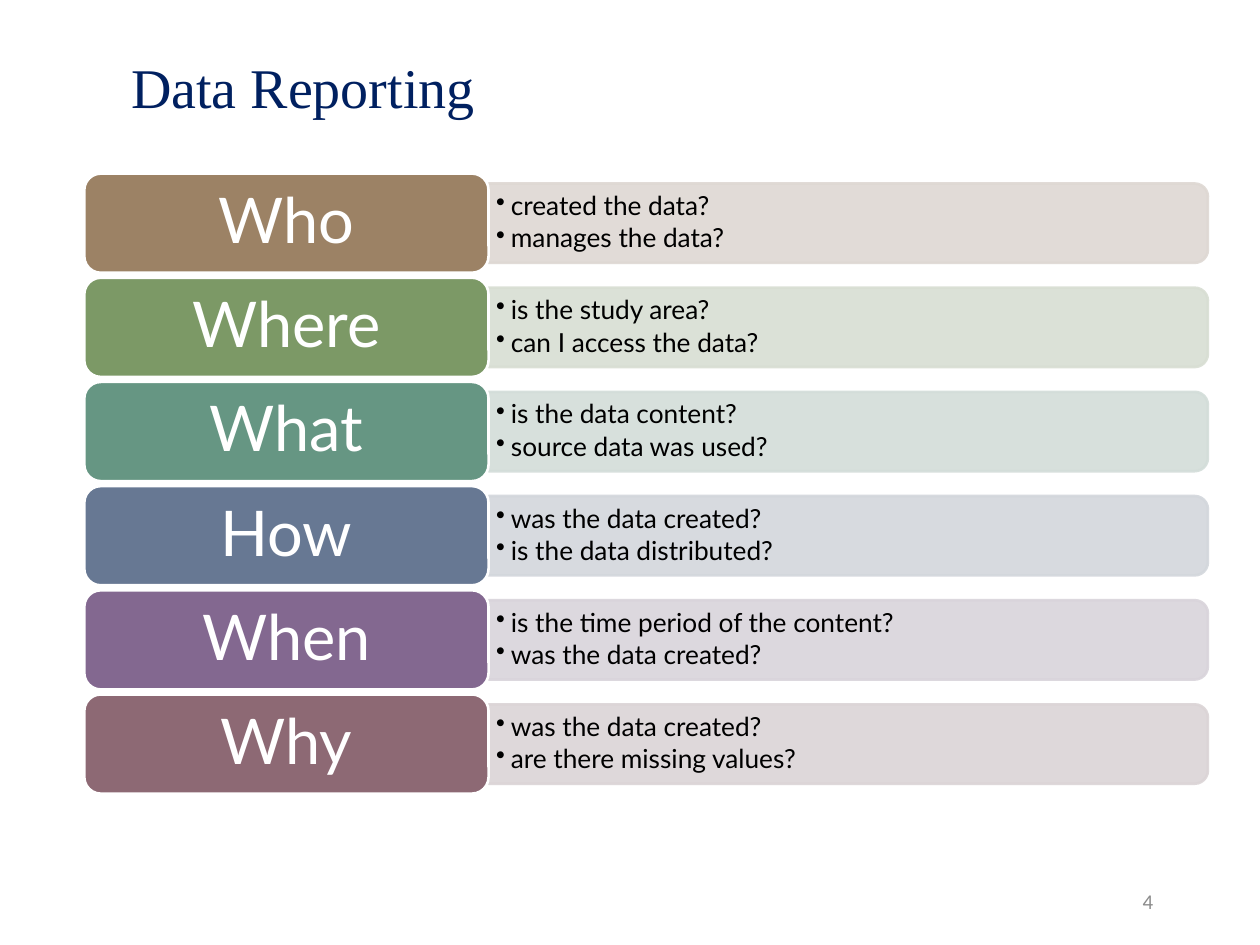
from lxml.etree import SubElement
from pptx import Presentation
from pptx.dml.color import RGBColor
from pptx.enum.shapes import MSO_SHAPE
from pptx.enum.text import MSO_ANCHOR, PP_ALIGN
from pptx.oxml.ns import qn
from pptx.util import Cm, Pt

NAVY = RGBColor(0x00, 0x20, 0x60)
GREY = RGBColor(0x8C, 0x8C, 0x8C)
BLACK = RGBColor(0x00, 0x00, 0x00)
WHITE = RGBColor(0xFF, 0xFF, 0xFF)
BROWN, PALE_BROWN = RGBColor(0x9C, 0x82, 0x65), RGBColor(0xDE, 0xD8, 0xD3)
GREEN, PALE_GREEN = RGBColor(0x7C, 0x99, 0x66), RGBColor(0xD8, 0xDE, 0xD3)
TEAL, PALE_TEAL = RGBColor(0x66, 0x96, 0x83), RGBColor(0xD3, 0xDD, 0xD9)
BLUE, PALE_BLUE = RGBColor(0x67, 0x78, 0x93), RGBColor(0xD3, 0xD7, 0xDC)
PURPLE, PALE_PURPLE = RGBColor(0x83, 0x68, 0x90), RGBColor(0xD9, 0xD4, 0xDB)
ROSE, PALE_ROSE = RGBColor(0x8D, 0x69, 0x74), RGBColor(0xDB, 0xD4, 0xD6)

TITLE = "Data Reporting"
PAGE_NUMBER = "4"
TOPICS = [
    ("Who", ["created the data?", "manages the data?"], BROWN, PALE_BROWN),
    ("Where", ["is the study area?", "can I access the data?"], GREEN, PALE_GREEN),
    ("What", ["is the data content?", "source data was used?"], TEAL, PALE_TEAL),
    ("How", ["was the data created?", "is the data distributed?"], BLUE, PALE_BLUE),
    ("When", ["is the time period of the content?", "was the data created?"],
     PURPLE, PALE_PURPLE),
    ("Why", ["was the data created?", "are there missing values?"], ROSE, PALE_ROSE),
]

LABEL_LEFT, LABEL_WIDTH, LABEL_HEIGHT = Cm(1.7), Cm(8.15), Cm(2)
FIRST_TOP, ROW_PITCH = Cm(3.5), Cm(2.1)
BAND_LEFT = LABEL_LEFT + LABEL_WIDTH
BAND_LENGTH, BAND_HEIGHT = Cm(14.5), Cm(1.6)
QUESTIONS_WIDTH, QUESTIONS_HEIGHT = Cm(14.43), Cm(1.45)
BULLET_INDENT = Cm(0.3)


def style_text(paragraph, font_name, size, color, align=PP_ALIGN.LEFT):
    paragraph.alignment = align
    for run in paragraph.runs:
        run.font.name = font_name
        run.font.size = Pt(size)
        run.font.color.rgb = color


def set_insets(frame, side, end):
    frame.margin_left = frame.margin_right = side
    frame.margin_top = frame.margin_bottom = end
    frame.vertical_anchor = MSO_ANCHOR.MIDDLE
    frame.word_wrap = True


def add_filled_shape(slide, preset, box, fill, line):
    shape = slide.shapes.add_shape(preset, *box)
    shape.shadow.inherit = False
    shape.fill.solid()
    shape.fill.fore_color.rgb = fill
    shape.line.color.rgb = line
    shape.line.width = Pt(1.5)
    return shape


def add_band(slide, middle, color):
    """Draw a pale band, turned so that its rounded end points right."""
    center = BAND_LEFT + BAND_LENGTH // 2
    box = (center - BAND_HEIGHT // 2, middle - BAND_LENGTH // 2,
           BAND_HEIGHT, BAND_LENGTH)
    band = add_filled_shape(slide, MSO_SHAPE.ROUND_2_SAME_RECTANGLE, box, color, color)
    band.rotation = 90
    for rgb in band.element.spPr.iter(qn("a:srgbClr")):
        SubElement(rgb, qn("a:alpha"), val="90000")


def add_questions(slide, middle, questions):
    frame = slide.shapes.add_textbox(
        BAND_LEFT, middle - QUESTIONS_HEIGHT // 2,
        QUESTIONS_WIDTH, QUESTIONS_HEIGHT).text_frame
    set_insets(frame, Cm(0.15), Cm(0.08))
    frame.text = "\n".join(questions)
    for paragraph in frame.paragraphs:
        properties = paragraph._p.get_or_add_pPr()
        properties.set("marL", str(BULLET_INDENT))
        properties.set("indent", str(-BULLET_INDENT))
        SubElement(properties, qn("a:buChar"), char="•")
        paragraph.line_spacing = 0.9
        paragraph.space_after = Pt(2.25)
        style_text(paragraph, "Lato", 15, BLACK)


def add_label(slide, top, topic, color):
    box = (LABEL_LEFT, top, LABEL_WIDTH, LABEL_HEIGHT)
    label = add_filled_shape(slide, MSO_SHAPE.ROUNDED_RECTANGLE, box, color, WHITE)
    frame = label.text_frame
    set_insets(frame, Cm(0.38), Cm(0.19))
    frame.text = topic
    paragraph = frame.paragraphs[0]
    paragraph.line_spacing = 0.9
    paragraph.space_after = Pt(12.6)
    style_text(paragraph, "Lato", 36, WHITE, PP_ALIGN.CENTER)


def main():
    presentation = Presentation()
    presentation.slide_width, presentation.slide_height = Cm(25.4), Cm(19.05)
    slide = presentation.slides.add_slide(presentation.slide_layouts[5])

    title = slide.shapes.title
    title.left, title.top, title.width, title.height = Cm(2.39), Cm(0.84), Cm(21.1), Cm(1.98)
    title.text_frame.text = TITLE
    title.text_frame.vertical_anchor = MSO_ANCHOR.MIDDLE
    title.text_frame.paragraphs[0].line_spacing = 0.9
    style_text(title.text_frame.paragraphs[0], "Times New Roman", 32, NAVY)

    for row, (topic, questions, color, pale_color) in enumerate(TOPICS):
        top = FIRST_TOP + row * ROW_PITCH
        middle = top + LABEL_HEIGHT // 2
        add_band(slide, middle, pale_color)
        add_questions(slide, middle, questions)
        add_label(slide, top, topic, color)

    page = slide.shapes.add_textbox(Cm(17.78), Cm(17.65), Cm(5.72), Cm(1.02)).text_frame
    page.word_wrap = True
    page.vertical_anchor = MSO_ANCHOR.MIDDLE
    page.text = PAGE_NUMBER
    style_text(page.paragraphs[0], "Calibri", 12, GREY, PP_ALIGN.RIGHT)

    presentation.save("out.pptx")


if __name__ == "__main__":
    main()
